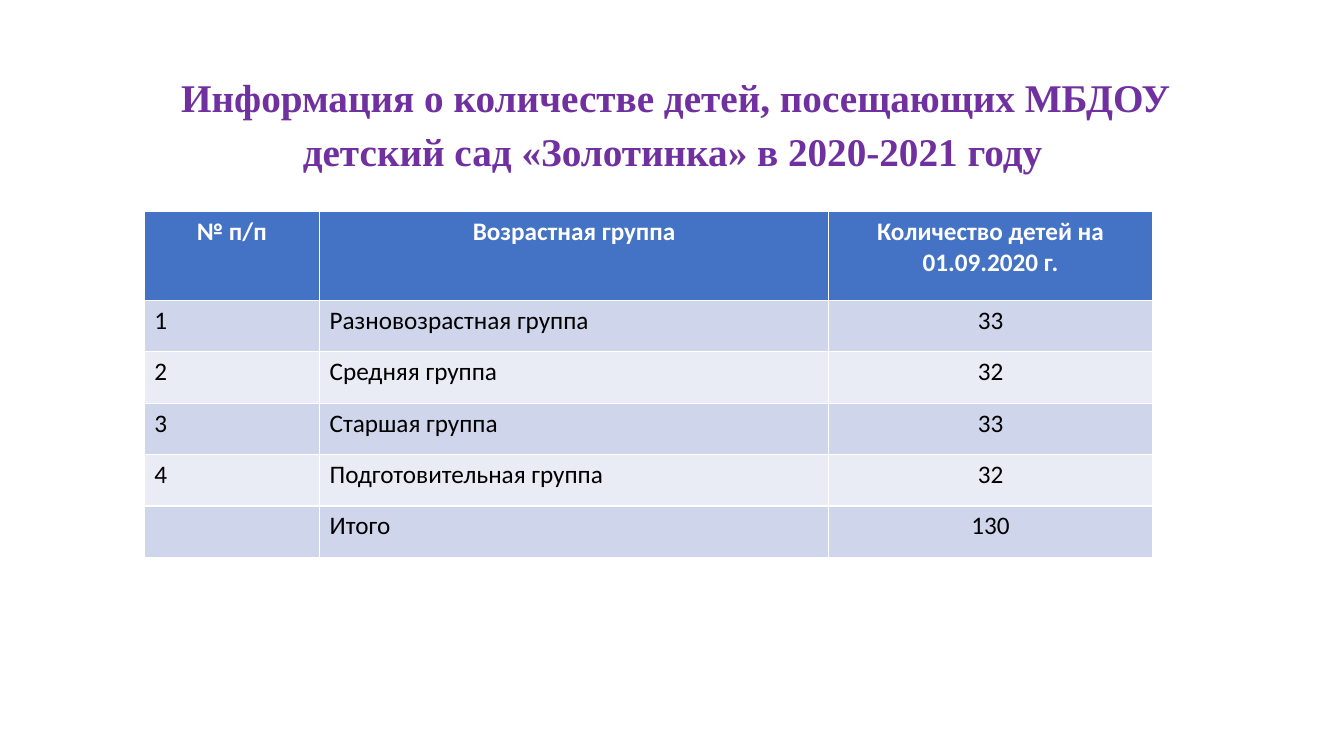
"""Builds a slide with the number of children in each kindergarten group."""
import pptx
import pptx.util
import pptx.dml.color
import pptx.enum.text

Inches = pptx.util.Inches
Pt = pptx.util.Pt
RGBColor = pptx.dml.color.RGBColor
CENTER = pptx.enum.text.PP_ALIGN.CENTER
LEFT = pptx.enum.text.PP_ALIGN.LEFT

PURPLE = RGBColor(0x70, 0x30, 0xA0)
BLACK = RGBColor(0x00, 0x00, 0x00)
WHITE = RGBColor(0xFF, 0xFF, 0xFF)
HEADER_BLUE = RGBColor(0x44, 0x72, 0xC4)
BAND_DARK = RGBColor(0xCF, 0xD5, 0xEA)
BAND_LIGHT = RGBColor(0xE9, 0xEB, 0xF5)

TITLE = "Информация о количестве детей, посещающих МБДОУ детский сад «Золотинка» в 2020-2021 году"
ROWS = [
    ("№ п/п", "Возрастная группа", "Количество детей на 01.09.2020 г."),
    ("1", "Разновозрастная группа", "33"),
    ("2", "Средняя группа", "32"),
    ("3", "Старшая группа", "33"),
    ("4", "Подготовительная группа", "32"),
    ("", "Итого", "130"),
]
COLUMN_WIDTHS = (1.74, 5.05, 3.21)
HEADER_HEIGHT = 0.88
ROW_HEIGHT = 0.51


def format_font(font, name, size, color, bold):
    font.name = name
    font.size = Pt(size)
    font.color.rgb = color
    font.bold = bold


def fill_title(title):
    title.left, title.top = Inches(0.92), Inches(0.4)
    title.width, title.height = Inches(11.5), Inches(1.59)
    frame = title.text_frame
    frame.auto_size = pptx.enum.text.MSO_AUTO_SIZE.NONE
    frame.vertical_anchor = pptx.enum.text.MSO_ANCHOR.MIDDLE
    para = frame.paragraphs[0]
    para.alignment = CENTER
    para.line_spacing = 1.15
    para.space_after = Pt(10)
    for text, size, color, bold in ((" ", 18, BLACK, False), (TITLE, 28, PURPLE, True)):
        span = para.add_run()
        span.text = text
        format_font(span.font, "Times New Roman", size, color, bold)


def fill_cell(cell, text, fill, color, bold, alignment):
    cell.fill.solid()
    cell.fill.fore_color.rgb = fill
    para = cell.text_frame.paragraphs[0]
    para.text = text
    para.alignment = alignment
    for span in para.runs:
        format_font(span.font, "Calibri", 18, color, bold)


def add_group_table(slide):
    height = HEADER_HEIGHT + ROW_HEIGHT * (len(ROWS) - 1)
    table = slide.shapes.add_table(
        len(ROWS), len(COLUMN_WIDTHS),
        Inches(1.43), Inches(2.1), Inches(sum(COLUMN_WIDTHS)), Inches(height),
    ).table
    for column, width in zip(table.columns, COLUMN_WIDTHS):
        column.width = Inches(width)
    for row_index, texts in enumerate(ROWS):
        header = row_index == 0
        table.rows[row_index].height = Inches(HEADER_HEIGHT if header else ROW_HEIGHT)
        band = BAND_DARK if row_index % 2 else BAND_LIGHT
        for column_index, text in enumerate(texts):
            centered = header or column_index == 2
            fill_cell(
                table.cell(row_index, column_index), text,
                HEADER_BLUE if header else band,
                WHITE if header else BLACK,
                header, CENTER if centered else LEFT,
            )


def main():
    deck = pptx.Presentation()
    deck.slide_width, deck.slide_height = Inches(13.33), Inches(7.5)
    slide = deck.slides.add_slide(deck.slide_layouts.get_by_name("Title Only"))
    fill_title(slide.shapes.title)
    add_group_table(slide)
    deck.save("out.pptx")


if __name__ == "__main__":
    main()
